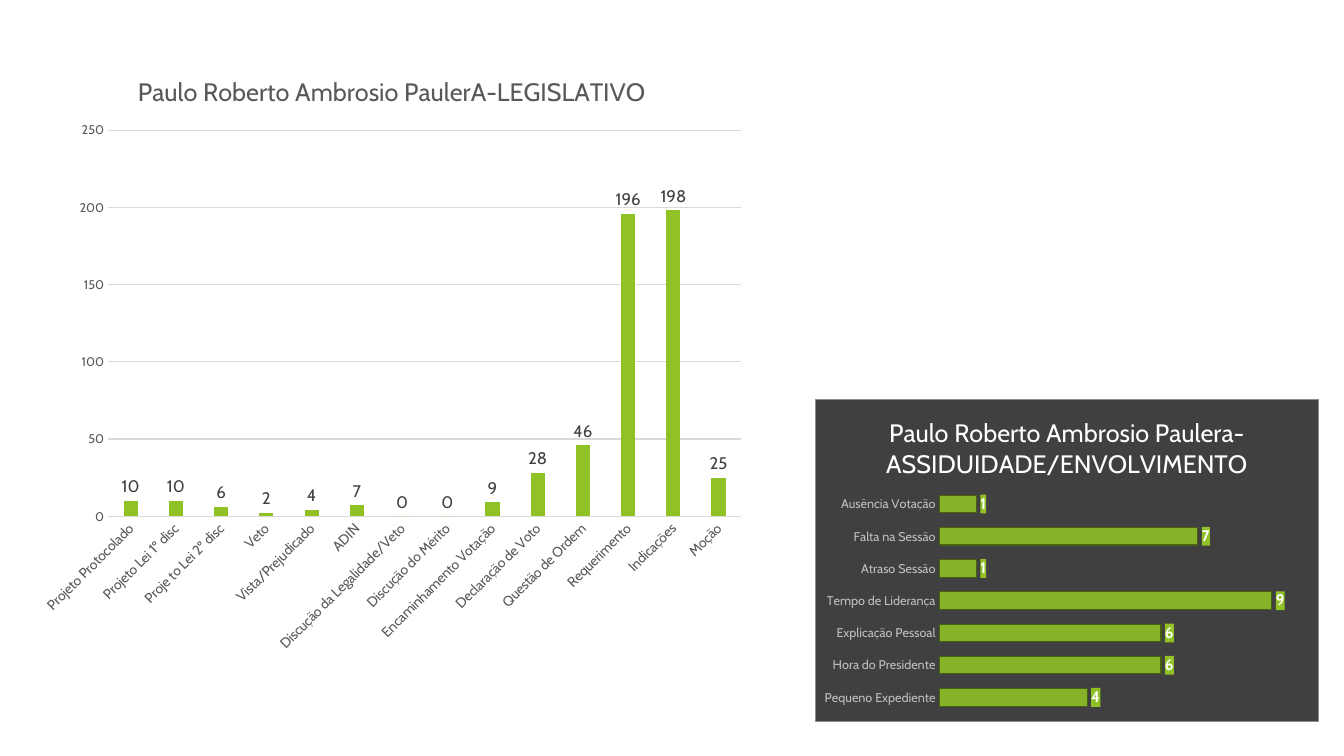
"""Builds a slide with two charts on a councillor's legislative work and attendance."""
from lxml import etree
from pptx import Presentation
from pptx.chart.data import CategoryChartData
from pptx.dml.color import RGBColor
from pptx.enum.chart import XL_CHART_TYPE, XL_LABEL_POSITION, XL_TICK_MARK
from pptx.oxml import parse_xml
from pptx.oxml.ns import nsdecls, qn
from pptx.util import Inches, Pt

COLUMNS = XL_CHART_TYPE.COLUMN_CLUSTERED
BARS = XL_CHART_TYPE.BAR_CLUSTERED
OUTSIDE_END = XL_LABEL_POSITION.OUTSIDE_END
NO_TICK = XL_TICK_MARK.NONE

BLACK = RGBColor(0x00, 0x00, 0x00)
WHITE = RGBColor(0xFF, 0xFF, 0xFF)
GREEN = RGBColor(0x90, 0xC2, 0x26)
DARK_GREEN = RGBColor(0x48, 0x61, 0x13)
CHARCOAL = RGBColor(0x40, 0x40, 0x40)
GRAPHITE = RGBColor(0x59, 0x59, 0x59)
MID_GREY = RGBColor(0x8C, 0x8C, 0x8C)
SILVER = RGBColor(0xBF, 0xBF, 0xBF)
PALE_GREY = RGBColor(0xD9, 0xD9, 0xD9)

LEGISLATIVE = {
    "Projeto Protocolado": 10,
    "Projeto Lei 1º disc": 10,
    "Proje to Lei 2º disc": 6,
    "Veto": 2,
    "Vista/Prejudicado": 4,
    "ADIN": 7,
    "Discução da Legalidade/Veto": 0,
    "Discução do Mérito": 0,
    "Encaminhamento Votação": 9,
    "Declaração de Voto": 28,
    "Questão de Ordem": 46,
    "Requerimento": 196,
    "Indicações": 198,
    "Moção": 25,
}
ATTENDANCE = {
    "Pequeno Expediente": 4,
    "Hora do Presidente": 6,
    "Explicação Pessoal": 6,
    "Tempo de Liderança": 9,
    "Atraso Sessão": 1,
    "Falta na Sessão": 7,
    "Ausência Votação": 1,
}


def style_font(font, size, color, bold=False):
    font.name = "Cabin"
    font.size = Pt(size)
    font.color.rgb = color
    font.bold = bold


def write_text(frame, text, **style):
    run = frame.paragraphs[0].add_run()
    run.text = text
    style_font(run.font, **style)


def fill_properties(fill, border=None):
    line = ""
    if border:
        line = (f'<a:ln w="{Pt(0.5)}"><a:solidFill><a:srgbClr val="{border}"/>'
                '</a:solidFill></a:ln>')
    return parse_xml(f'<c:spPr {nsdecls("c", "a")}><a:solidFill>'
                     f'<a:srgbClr val="{fill}"/></a:solidFill>{line}</c:spPr>')


class ChartSlide:
    """Holds the current slide and adds charts in its shared style."""

    def __init__(self, deck):
        self.slide = deck.slides.add_slide(deck.slide_layouts[6])

    def add_chart(self, kind, values, title, title_color, box, plot_box, gap):
        data = CategoryChartData(number_format="0")
        data.categories = list(values)
        data.add_series("Series 1", list(values.values()))
        frame = self.slide.shapes.add_chart(kind, *map(Inches, box), data)
        chart = frame.chart
        chart.has_legend = False
        style_font(chart.font, size=10, color=BLACK)
        chart.has_title = True
        write_text(chart.chart_title.text_frame, title, size=18, color=title_color)
        chart.chart_title.include_in_layout = False
        plot = chart.plots[0]
        plot.gap_width = gap
        plot.vary_by_categories = False
        series = plot.series[0]
        series.invert_if_negative = False
        series.format.fill.solid()
        series.format.fill.fore_color.rgb = GREEN
        for axis in (chart.category_axis, chart.value_axis):
            axis.major_tick_mark = axis.minor_tick_mark = NO_TICK
            axis.has_major_gridlines = False
            axis.format.line.fill.background()
        self.place_plot(chart, plot_box)
        return chart

    def place_plot(self, chart, plot_box):
        area = chart.element.find(".//" + qn("c:plotArea")) if hasattr(chart, "element") \
            else chart._chartSpace.find(".//" + qn("c:plotArea"))
        for old in area.findall(qn("c:layout")):
            area.remove(old)
        layout = etree.Element(qn("c:layout"))
        manual = etree.SubElement(layout, qn("c:manualLayout"))
        settings = [("layoutTarget", "inner"), ("xMode", "edge"), ("yMode", "edge")]
        for tag, value in settings + list(zip("xywh", plot_box)):
            etree.SubElement(manual, qn(f"c:{tag}")).set("val", str(value))
        area.insert(0, layout)

    def label_values(self, chart, **style):
        labels = chart.plots[0].series[0].data_labels
        labels.show_value = True
        labels.number_format = "0"
        labels.number_format_is_linked = False
        labels.position = OUTSIDE_END
        style_font(labels.font, **style)
        return labels

    def add_legislative_chart(self):
        chart = self.add_chart(
            COLUMNS, LEGISLATIVE, "Paulo Roberto Ambrosio PaulerA-LEGISLATIVO",
            GRAPHITE, (0.28, 0.52, 7.21, 6.08), (0.11, 0.127, 0.871, 0.63), gap=219)
        chart.plots[0].overlap = -27
        self.label_values(chart, size=12, color=CHARCOAL)
        category, value = chart.category_axis, chart.value_axis
        style_font(category.tick_labels.font, size=10, color=GRAPHITE)
        category._element.find(qn("c:txPr")).find(qn("a:bodyPr")).set("rot", "-2700000")
        style_font(value.tick_labels.font, size=9, color=GRAPHITE)
        value.minimum_scale, value.maximum_scale, value.major_unit = 0, 250, 50
        value.has_major_gridlines = True
        for line in (category.format.line, value.major_gridlines.format.line):
            line.color.rgb = PALE_GREY
            line.width = Pt(0.75)

    def add_attendance_chart(self):
        chart = self.add_chart(
            BARS, ATTENDANCE, "Paulo Roberto Ambrosio Paulera-ASSIDUIDADE/ENVOLVIMENTO",
            WHITE, (8.08, 3.96, 5, 3.2), (0.247, 0.275, 0.734, 0.701), gap=84)
        style_font(chart.category_axis.tick_labels.font, size=9, color=SILVER)
        chart.value_axis.minimum_scale, chart.value_axis.maximum_scale = 0, 10
        chart.value_axis.visible = False
        bars = chart.plots[0].series[0]
        bars.format.line.color.rgb = DARK_GREEN
        bars.format.line.width = Pt(0.75)
        shade = bars._element.find(f'{qn("c:spPr")}/{qn("a:solidFill")}/{qn("a:srgbClr")}')
        etree.SubElement(shade, qn("a:alpha")).set("val", "88000")
        labels = self.label_values(chart, size=11, color=WHITE, bold=True)
        labels._element.find(qn("c:txPr")).addprevious(fill_properties(GREEN))
        chart._chartSpace.find(qn("c:txPr")).addprevious(fill_properties(CHARCOAL, MID_GREY))


def main():
    deck = Presentation()
    deck.slide_width, deck.slide_height = Inches(13.33), Inches(7.5)
    page = ChartSlide(deck)
    page.add_legislative_chart()
    page.add_attendance_chart()
    deck.save("out.pptx")


if __name__ == "__main__":
    main()
